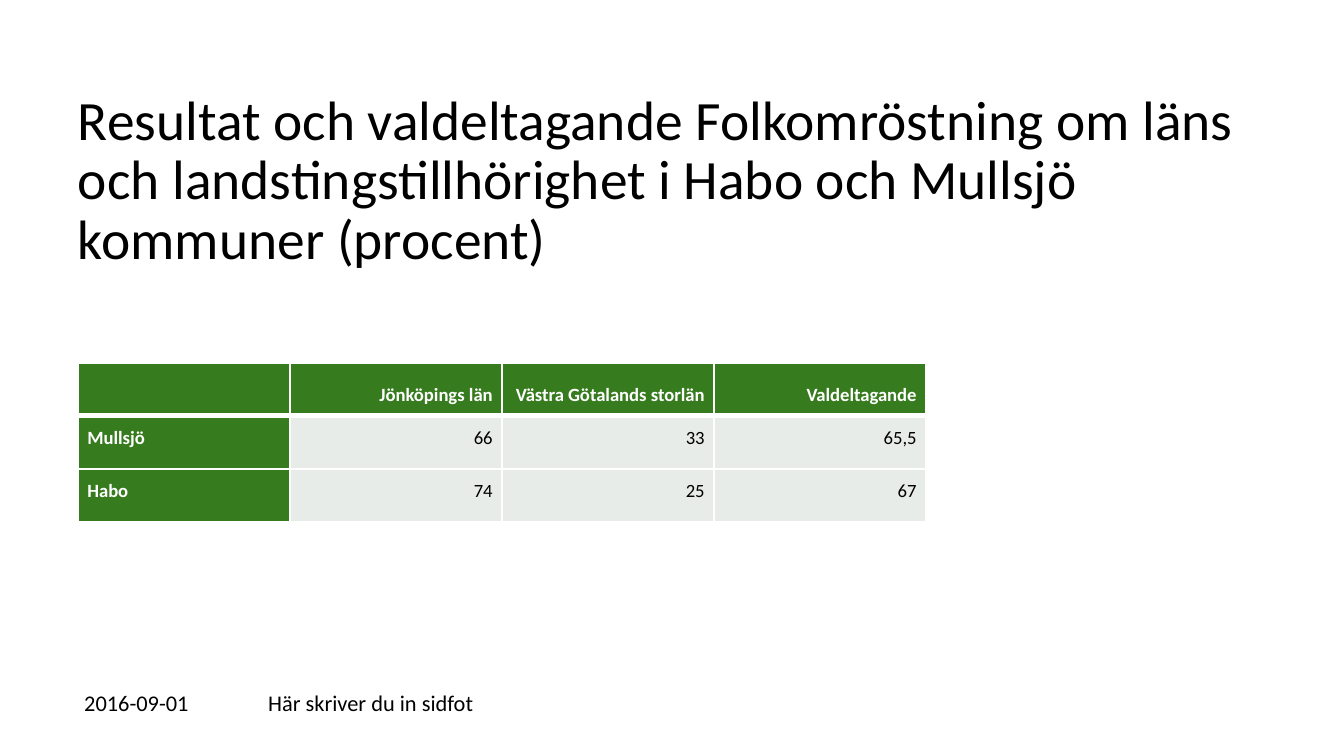
from lxml import etree
from pptx import Presentation
from pptx import util as u
from pptx.dml.color import RGBColor
from pptx.enum import text as t
from pptx.oxml.ns import qn

TITLE = ("Resultat och valdeltagande Folkomröstning om läns och "
         "landstingstillhörighet i Habo och Mullsjö kommuner (procent)")
FOOT = [("2016-09-01", (71, 683, 180, 40)),
        ("Här skriver du in sidfot", (255, 683, 656, 40))]
ROWS = [["", "Jönköpings län", "Västra Götalands storlän", "Valdeltagande"],
        ["Mullsjö", "66", "33", "65,5"],
        ["Habo", "74", "25", "67"]]
LEFT, TOP, COL, ROW = 78, 363, 212, 53
GREEN, GREY, WHITE, BLACK = "367B1E", "E8ECE8", "FFFFFF", "000000"


def px(n):
    return u.Emu(round(n * 914400 / 134.4))


def rgb(code):
    return RGBColor.from_string(code)


def style(par, size, color=BLACK, bold=False):
    for run in par.runs:
        font = run.font
        font.name, font.size, font.bold = "Calibri", u.Pt(size), bold
        font.color.rgb = rgb(color)


def place(shape, box):
    shape.left, shape.top, shape.width, shape.height = map(px, box)


def edge(cell, widths):
    """Draw white cell borders; widths maps L, R, T, B to points."""
    props = cell._tc.get_or_add_tcPr()
    for i, (side, width) in enumerate(widths.items()):
        line = etree.Element(qn("a:ln" + side), w=str(u.Pt(width)))
        fill = etree.SubElement(line, qn("a:solidFill"))
        etree.SubElement(fill, qn("a:srgbClr"), val=WHITE)
        props.insert(i, line)


def fill_cell(cell, words, r, c):
    head = r == 0 or c == 0
    cell.fill.solid()
    cell.fill.fore_color.rgb = rgb(GREEN if head else GREY)
    cell.margin_left = cell.margin_right = u.Inches(0.07)
    cell.margin_top = cell.margin_bottom = 0
    cell.vertical_anchor = t.MSO_ANCHOR.TOP if r else t.MSO_ANCHOR.MIDDLE
    edge(cell, {"L": 1, "R": 1, "T": 3 if r == 1 else 1, "B": 1 if r else 3})
    if words:
        cell.text_frame.text = words
        par = cell.text_frame.paragraphs[0]
        par.line_spacing = 1.5
        par.alignment = t.PP_ALIGN.RIGHT if c else t.PP_ALIGN.LEFT
        style(par, 10, WHITE if head else BLACK, head)


def main():
    deck = Presentation()
    deck.slide_width, deck.slide_height = px(1344), px(756)
    slide = deck.slides.add_slide(deck.slide_layouts[5])

    title = slide.shapes.title
    place(title, (78, 106, 1187, 152))
    frame = title.text_frame
    frame.text = TITLE
    frame.auto_size = t.MSO_AUTO_SIZE.NONE
    frame.vertical_anchor = t.MSO_ANCHOR.MIDDLE
    frame.margin_left = frame.margin_right = 0
    frame.margin_top = frame.margin_bottom = 0
    par = frame.paragraphs[0]
    par.alignment, par.line_spacing = t.PP_ALIGN.LEFT, 0.9
    style(par, 29.7)

    for words, box in FOOT:
        frame = slide.shapes.add_textbox(*map(px, box)).text_frame
        frame.text = words
        frame.word_wrap = True
        frame.vertical_anchor = t.MSO_ANCHOR.MIDDLE
        style(frame.paragraphs[0], 12)

    wide, high = len(ROWS[0]), len(ROWS)
    box = LEFT, TOP, wide * COL, high * ROW
    table = slide.shapes.add_table(high, wide, *map(px, box)).table
    for r, row in enumerate(ROWS):
        for c, words in enumerate(row):
            fill_cell(table.cell(r, c), words, r, c)

    deck.save("out.pptx")


if __name__ == "__main__":
    main()
